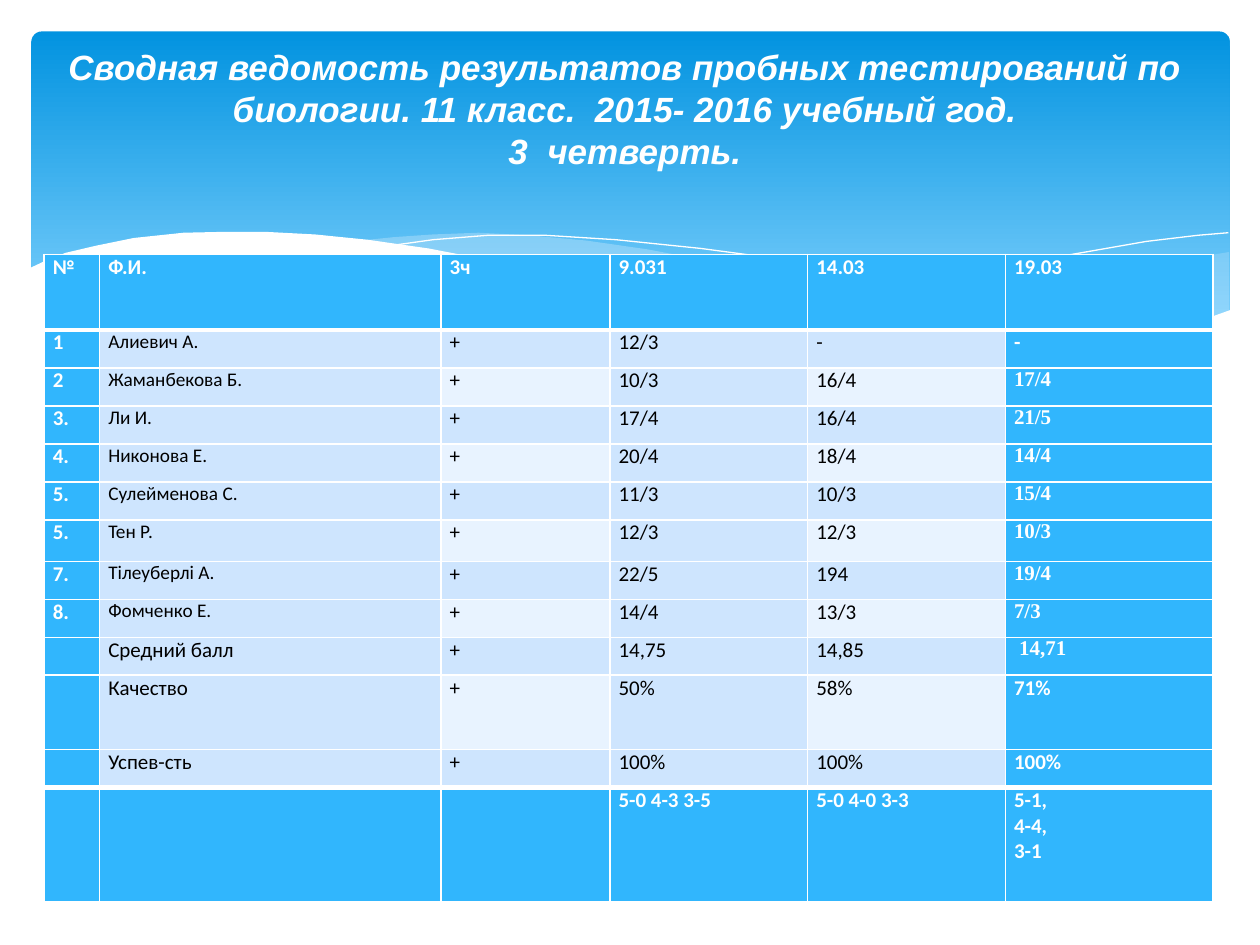
import lxml.etree
import pptx
import pptx.dml.color
import pptx.enum.shapes
import pptx.enum.text
import pptx.oxml.ns
import pptx.util

Pt = pptx.util.Pt
RGB = pptx.dml.color.RGBColor
qn = pptx.oxml.ns.qn
WHITE = RGB(0xFF, 0xFF, 0xFF)
BLACK = RGB(0, 0, 0)
DEEP = RGB(0x02, 0x93, 0xE0)
SKY = RGB(0x83, 0xD3, 0xFE)
MIST = RGB(0xC6, 0xE7, 0xFC)
BLUE = RGB(0x31, 0xB6, 0xFD)
PALE = RGB(0xCE, 0xE5, 0xFE)
LIGHT = RGB(0xE8, 0xF3, 0xFF)

RIGHT = [(702.5, 144), (673, 149), (641.5, 155.5), (599, 165.5), (561, 174),
         (525, 182), (476, 191), (507.5, 195), (536.5, 198), (578, 200),
         (615, 198.5), (646, 194.5), (673, 188.5), (702.5, 178)]
MIDDLE = [(643, 196.5), (602.5, 191), (558, 183), (508.5, 173), (453, 160),
          (409.5, 150), (370, 142.5), (335, 137.5), (302.5, 134.5), (273.5, 133),
          (247.5, 134), (225.5, 135.5), (206, 137.5), (246, 143.5), (291, 152),
          (323.5, 160), (381.5, 173), (432.5, 183.5), (479, 191.5), (520, 197.5),
          (556.5, 199.5), (589, 200), (617, 199.5)]
CREST = [(222.5, 140.5), (247.5, 137), (278.5, 134.5), (312, 134.5), (352, 137),
         (400.5, 142), (438, 147), (479, 153.5), (523.5, 162.5), (572.5, 173.5),
         (625.5, 188), (653, 196)]
RISE = [(441.5, 185), (484, 173.5), (538.5, 160.5), (580.5, 151), (623.5, 143.5),
        (655, 138), (684.5, 134.5), (702, 133)]
FRONT = [(703.5, 177), (677, 186.5), (647, 193.5), (612, 198), (582.5, 199.5),
         (548, 198), (510, 194.5), (466.5, 188.5), (417, 180), (362, 168),
         (322, 158.5), (281.5, 149), (245, 142), (210, 137), (180, 134),
         (152, 132.5), (127.5, 132.5), (105, 133), (76.5, 136), (54.5, 140.5),
         (37.5, 144.5), (26, 149), (16.5, 153.5), (16.5, 237), (703.5, 237)]

TITLE = ["Сводная ведомость результатов пробных тестирований по биологии. "
         "11 класс.  2015- 2016 учебный год.", "3  четверть."]
COLS = [31.7, 195.1, 96.5, 113, 113, 118.8]
TALL = {0: 43.2, 6: 23.8, 10: 42.5, 12: 65.5}
ROWS = [
    ["№", "Ф.И.", "3ч", "9.031", "14.03", "19.03"],
    ["1", "Алиевич А.", "+", "12/3", "-", "-"],
    ["2", "Жаманбекова Б.", "+", "10/3", "16/4", "17/4"],
    ["3.", "Ли И.", "+", "17/4", "16/4", "21/5"],
    ["4.", "Никонова Е.", "+", "20/4", "18/4", "14/4"],
    ["5.", "Сулейменова С.", "+", "11/3", "10/3", "15/4"],
    ["5.", "Тен Р.", "+", "12/3", "12/3", "10/3"],
    ["7.", "Тiлеуберлi А.", "+", "22/5", "194", "19/4"],
    ["8.", "Фомченко Е.", "+", "14/4", "13/3", "7/3"],
    ["", "Средний балл", "+", "14,75", "14,85", " 14,71"],
    ["", "Качество", "+", "50%", "58%", "71%"],
    ["", "Успев-сть", "+", "100%", "100%", "100%"],
    ["", "", "", "5-0 4-3 3-5", "5-0 4-0 3-3", "5-1,\n4-4,\n3-1"],
]


class Deck:
    """Holds the text style and the current slide, and draws each kind of element."""

    def __init__(self, slide):
        self.slide = slide
        self.style = {"name": "Calibri", "size": Pt(12), "bold": True, "italic": False}

    def letter(self, frame, lines, color, **look):
        for num, line in enumerate(lines):
            para = frame.add_paragraph() if num else frame.paragraphs[0]
            run = para.add_run()
            run.text = line
            run.font.color.rgb = color
            for key, val in {**self.style, **look}.items():
                setattr(run.font, key, val)

    def panel(self, left, top, width, height):
        kind = pptx.enum.shapes.MSO_SHAPE.ROUNDED_RECTANGLE
        shape = self.slide.shapes.add_shape(kind, Pt(left), Pt(top), Pt(width), Pt(height))
        shape.shadow.inherit = False
        shape.adjustments[0] = 0.03
        shape.line.fill.background()
        shape.fill.gradient()
        shape.fill.gradient_angle = 270
        for stop, color, place in zip(shape.fill.gradient_stops, (DEEP, SKY), (0, 0.9)):
            stop.color.rgb = color
            stop.position = place

    def outline(self, points, close):
        spots = [(Pt(x), Pt(y)) for x, y in points]
        pen = self.slide.shapes.build_freeform(*spots[0], scale=1.0)
        pen.add_line_segments(spots[1:], close=close)
        shape = pen.convert_to_shape()
        shape.shadow.inherit = False
        return shape

    def wave(self, points, color, alpha=100):
        shape = self.outline(points, True)
        shape.line.fill.background()
        shape.fill.solid()
        shape.fill.fore_color.rgb = color
        if alpha < 100:
            tone = shape.element.spPr.find(qn("a:solidFill")).find(qn("a:srgbClr"))
            lxml.etree.SubElement(tone, qn("a:alpha")).set("val", str(alpha * 1000))

    def curve(self, points):
        shape = self.outline(points, False)
        shape.fill.background()
        shape.line.color.rgb = WHITE
        shape.line.width = Pt(0)

    def title(self, lines, left, top, width, height):
        box = self.slide.shapes.add_textbox(Pt(left), Pt(top), Pt(width), Pt(height))
        frame = box.text_frame
        look = {"word_wrap": True, "margin_bottom": Pt(20),
                "vertical_anchor": pptx.enum.text.MSO_ANCHOR.MIDDLE}
        for key, val in look.items():
            setattr(frame, key, val)
        self.letter(frame, lines, WHITE, name="Arial", size=Pt(20), italic=True)
        for para in frame.paragraphs:
            para.alignment = pptx.enum.text.PP_ALIGN.CENTER

    def edge(self, cell, sides):
        props = cell._tc.get_or_add_tcPr()
        for num, (side, width) in enumerate(sides.items()):
            line = lxml.etree.Element(qn("a:ln" + side), w=str(Pt(width)))
            fill = lxml.etree.SubElement(line, qn("a:solidFill"))
            lxml.etree.SubElement(fill, qn("a:srgbClr")).set("val", str(WHITE))
            props.insert(num, line)

    def cell(self, cell, text, fill, color, sides, **look):
        pads = {"margin_left": 5, "margin_right": 5, "margin_top": 0, "margin_bottom": 0}
        for key, val in pads.items():
            setattr(cell, key, Pt(val))
        cell.fill.solid()
        cell.fill.fore_color.rgb = fill
        self.edge(cell, sides)
        self.letter(cell.text_frame, text.split("\n"), color, **look)

    def table(self, rows, cols, left, top):
        high = [TALL.get(num, 21.7) for num in range(len(rows))]
        grid = self.slide.shapes.add_table(len(rows), len(cols), Pt(left), Pt(top),
                                           Pt(sum(cols)), Pt(sum(high))).table
        grid.first_row = grid.horz_banding = False
        for col, width in zip(grid.columns, cols):
            col.width = Pt(width)
        last = len(rows) - 1
        for r, row in enumerate(rows):
            grid.rows[r].height = Pt(high[r])
            sides = {"L": 1, "R": 1, "T": 3 if r in (1, last) else 1,
                     "B": 3 if r in (0, last - 1) else 1}
            for c, text in enumerate(row):
                strong = r in (0, last) or c in (0, 5)
                band = LIGHT if r % 2 == 0 and c in (2, 4) else PALE
                look = {"bold": strong}
                if c == 1 and 1 <= r <= 8:
                    look["size"] = Pt(11)
                if c == 5 and 2 <= r <= 9:
                    look["name"] = "Times New Roman"
                self.cell(grid.cell(r, c), text, BLUE if strong else band,
                          WHITE if strong else BLACK, sides, **look)


def main():
    show = pptx.Presentation()
    show.slide_width, show.slide_height = Pt(720), Pt(540)
    deck = Deck(show.slides.add_slide(show.slide_layouts[6]))
    deck.panel(18, 18, 684.7, 194.4)
    deck.wave(RIGHT, MIST, 29)
    deck.wave(MIDDLE, MIST, 40)
    deck.curve(CREST)
    deck.curve(RISE)
    deck.wave(FRONT, WHITE)
    deck.table(ROWS, COLS, 25.2, 145.4)
    deck.title(TITLE, 25.2, 21.6, 663.8, 97.2)
    show.save("out.pptx")


if __name__ == "__main__":
    main()
